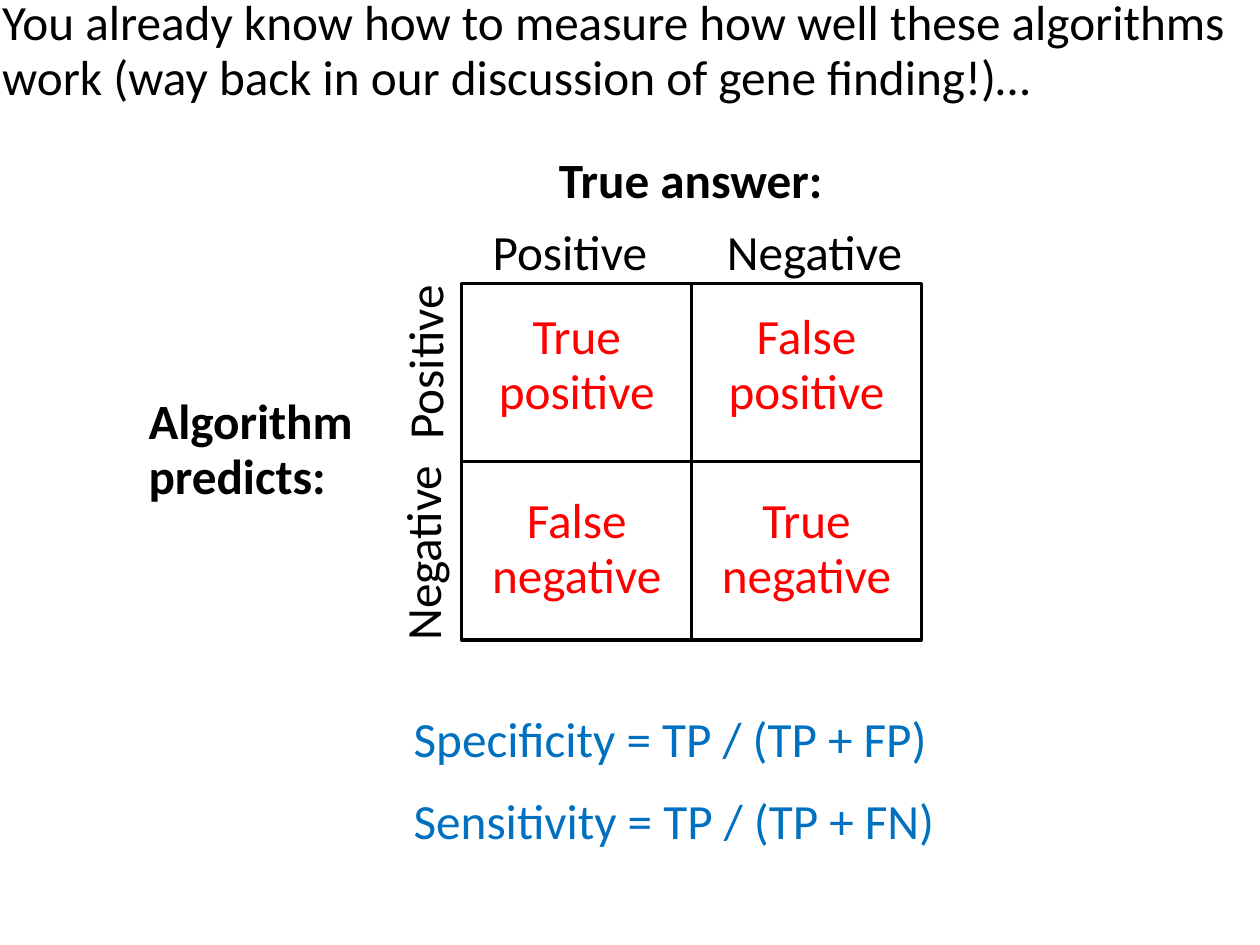
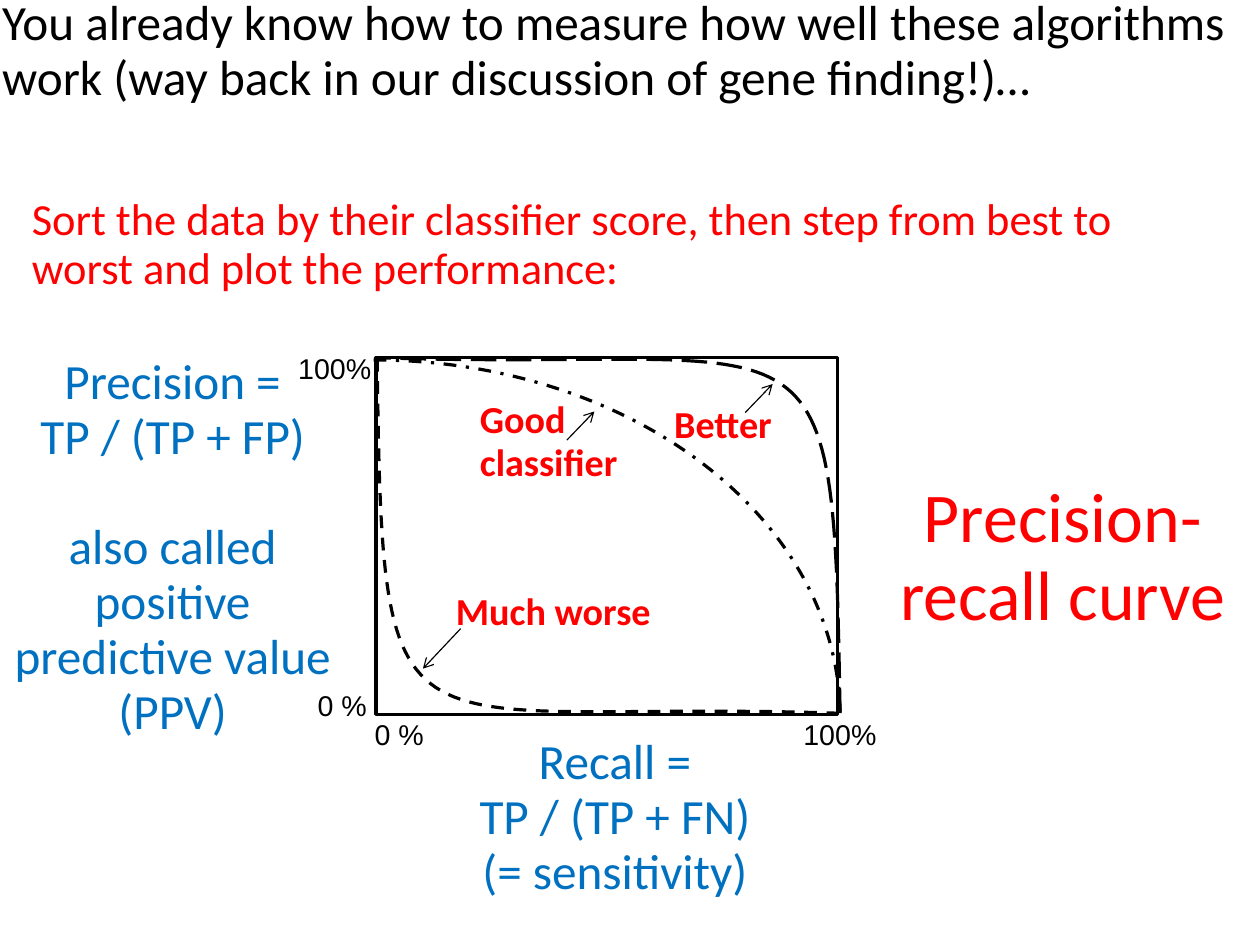
from dataclasses import dataclass

from lxml import etree
from pptx import Presentation
from pptx.dml.color import RGBColor
from pptx.enum.dml import MSO_LINE
from pptx.enum.shapes import MSO_CONNECTOR, MSO_SHAPE
from pptx.enum.text import MSO_ANCHOR, MSO_AUTO_SIZE, PP_ALIGN
from pptx.oxml.ns import qn
from pptx.util import Inches, Pt

LEFT, CENTER = PP_ALIGN.LEFT, PP_ALIGN.CENTER
TOP, FIT = MSO_ANCHOR.TOP, MSO_AUTO_SIZE.SHAPE_TO_FIT_TEXT
RECT, ARC, STRAIGHT = MSO_SHAPE.RECTANGLE, MSO_SHAPE.ARC, MSO_CONNECTOR.STRAIGHT
DASH, LONG, DOT = MSO_LINE.DASH, MSO_LINE.LONG_DASH, MSO_LINE.DASH_DOT

COLORS = {"black": "000000", "red": "FF0000", "blue": "0070C0", "white": "FFFFFF"}
TITLE = ("You already know how to measure how well these algorithms "
         "work (way back in our discussion of gene finding!)…")
CM = 2.54  # centimetres in an inch; the page is 28 by 21 cm
WIDE, SNUG = (0.11, 0.06), (0.1, 0.05)
CELL_W, CELL_H = 2.01, 1.56
GRID_X, GRID_Y = 4.04, 2.48
STEPS = 60


@dataclass
class Label:
    text: str
    box: tuple[float, float, float, float]
    turn: int = 0


@dataclass
class Row:
    names: tuple[str, str]
    drop: float


@dataclass
class Curve:
    points: list[tuple[float, float]]
    dash: MSO_LINE


HEADS = [
    Label("Positive", (4.2, 1.92, 1.59, 0.6)),
    Label("Negative", (6.25, 1.92, 1.77, 0.6)),
    Label("Positive", (2.94, 2.86, 1.59, 0.6), 270),
    Label("Negative", (2.83, 4.53, 1.77, 0.6), 270),
]
ROWS = [
    Row(("True positive", "False positive"), 0.24),
    Row(("False negative", "True negative"), 0.29),
]
RATES = [
    Label("Specificity = TP / (TP + FP)", (3.51, 6.18, 4.86, 0.6)),
    Label("Sensitivity = TP / (TP + FN)", (3.51, 6.9, 4.83, 0.6)),
]
CURVES = [
    Curve([(3.3, 3.14), (3.35, 6.88), (3.4, 6.11), (7.33, 6.24)], DASH),
    Curve([(7.35, 6.24), (7.29, 2.49), (7.24, 3.26), (3.32, 3.13)], LONG),
]
ARROWS = [
    ((6.52, 3.61), (6.76, 3.36)),
    ((4.03, 5.5), (3.7, 5.85)),
    ((4.96, 3.85), (5.2, 3.6)),
]
TICKS = [
    Label("0 %", (2.68, 6, 0.64, 0.38)),
    Label("100%", (6.93, 6.25, 0.85, 0.38)),
    Label("100%", (2.51, 3.05, 0.85, 0.38)),
    Label("0 %", (3.18, 6.25, 0.64, 0.38)),
]


def rgb(name: str) -> RGBColor:
    return RGBColor.from_string(COLORS[name])


def write(frame, text: str, *, size=31, color="black", font="Calibri", bold=False,
          align=LEFT, wrap=False, pad=WIDE, gaps=()) -> None:
    """Fill a frame, one paragraph a line; gaps holds (line, points before)."""
    frame.word_wrap = wrap
    frame.vertical_anchor = TOP
    frame.margin_left = frame.margin_right = Inches(pad[0])
    frame.margin_top = frame.margin_bottom = Inches(pad[1])
    before = dict(gaps)
    for i, line in enumerate(text.split("\n")):
        para = frame.paragraphs[0] if i == 0 else frame.add_paragraph()
        para.alignment = align
        para.line_spacing = 0.93
        if i in before:
            para.space_before = Pt(before[i])
        run = para.add_run()
        run.text = line
        run.font.size = Pt(size)
        run.font.name = font
        run.font.bold = bold
        run.font.color.rgb = rgb(color)


def add_text(slide, text: str, box, *, turn=0, **style):
    shape = slide.shapes.add_textbox(*map(Inches, box))
    write(shape.text_frame, text, **style)
    shape.text_frame.auto_size = FIT
    shape.rotation = turn
    return shape


def outline(shape, dash=None) -> None:
    shape.shadow.inherit = False
    shape.fill.background()
    shape.line.color.rgb = rgb("black")
    shape.line.width = Pt(2)
    if dash is not None:
        shape.line.dash_style = dash


def add_frame(slide, kind, box, dash=None):
    shape = slide.shapes.add_shape(kind, *map(Inches, box))
    outline(shape, dash)
    return shape


def add_curve(slide, curve: Curve) -> None:
    """Draw a cubic Bezier curve as short line segments."""
    spots = []
    for i in range(STEPS + 1):
        t = i / STEPS
        parts = ((1 - t) ** 3, 3 * t * (1 - t) ** 2, 3 * t * t * (1 - t), t ** 3)
        spots.append(tuple(Inches(sum(k * p[axis] for k, p in zip(parts, curve.points)))
                           for axis in (0, 1)))
    pen = slide.shapes.build_freeform(*spots[0])
    pen.add_line_segments(spots[1:], close=False)
    outline(pen.convert_to_shape(), curve.dash)


def add_arrow(slide, start, end) -> None:
    arrow = slide.shapes.add_connector(STRAIGHT, *map(Inches, (*start, *end)))
    arrow.line.color.rgb = rgb("black")
    arrow.line.width = Pt(0.75)
    props = arrow.element.spPr
    etree.SubElement(props.find(qn("a:ln")), qn("a:tailEnd"), type="arrow")
    etree.SubElement(props, qn("a:effectLst"))


def add_page(deck):
    """Add a blank slide with the shared title."""
    slide = deck.slides.add_slide(deck.slide_layouts[6])
    add_text(slide, TITLE, (-0.09, -0.09, 11.12, 1.08), wrap=True)
    return slide


def draw_matrix(deck) -> None:
    slide = add_page(deck)
    for i, row in enumerate(ROWS):
        for j, name in enumerate(row.names):
            box = (GRID_X + j * CELL_W, GRID_Y + i * CELL_H, CELL_W, CELL_H)
            cell = add_frame(slide, RECT, box)
            write(cell.text_frame, name, color="red", align=CENTER, wrap=True,
                  pad=(0.11, row.drop))
    add_text(slide, "Algorithm\npredicts:", (1.19, 3.4, 2.03, 1.08), bold=True)
    add_text(slide, "True answer:", (4.78, 1.29, 2.55, 0.6), bold=True)
    for head in HEADS:
        add_text(slide, head.text, head.box, turn=head.turn)
    for rate in RATES:
        add_text(slide, rate.text, rate.box, color="blue")


def draw_plot(deck) -> None:
    slide = add_page(deck)
    arc = add_frame(slide, ARC, (-0.79, 3.15, 8.14, 6.24), DOT)
    arc.adjustments[0], arc.adjustments[1] = 161.87, 215.95
    add_frame(slide, RECT, (3.29, 3.13, 4.04, 3.12))
    add_text(slide, "Recall =\nTP / (TP + FN)\n(= sensitivity)",
             (4.03, 6.38, 2.7, 1.57), color="blue", align=CENTER)
    add_text(slide, "Precision =\nTP / (TP + FP)\n"
             "also called positive predictive value (PPV)",
             (0.01, 3.05, 3, 3.51), color="blue", align=CENTER, wrap=True,
             gaps=[(2, 35)])
    add_text(slide, "Sort the data by their classifier score, then step from best to "
             "worst and plot the performance:",
             (0.18, 1.66, 10.25, 0.98), size=28, color="red", wrap=True, pad=SNUG)
    add_text(slide, "Precision- recall curve", (7.76, 4.15, 3.08, 1.48),
             size=44, color="red", align=CENTER, wrap=True, pad=SNUG)

    note = {"size": 24, "color": "red", "bold": True, "pad": SNUG}
    add_text(slide, "Good classifier", (4.1, 3.45, 1.44, 0.85), wrap=True, **note)
    add_text(slide, "Better", (5.8, 3.49, 1.08, 0.48), **note)
    worse = add_text(slide, "Much worse", (3.89, 5.13, 1.92, 0.48), **note)
    worse.fill.solid()
    worse.fill.fore_color.rgb = rgb("white")

    for curve in CURVES:
        add_curve(slide, curve)
    for start, end in ARROWS:
        add_arrow(slide, start, end)
    for tick in TICKS:
        add_text(slide, tick.text, tick.box, size=18, font="Arial", pad=SNUG)


def main() -> None:
    deck = Presentation()
    deck.slide_width = Inches(28 / CM)
    deck.slide_height = Inches(21 / CM)
    draw_matrix(deck)
    draw_plot(deck)
    deck.save("out.pptx")


if __name__ == "__main__":
    main()
